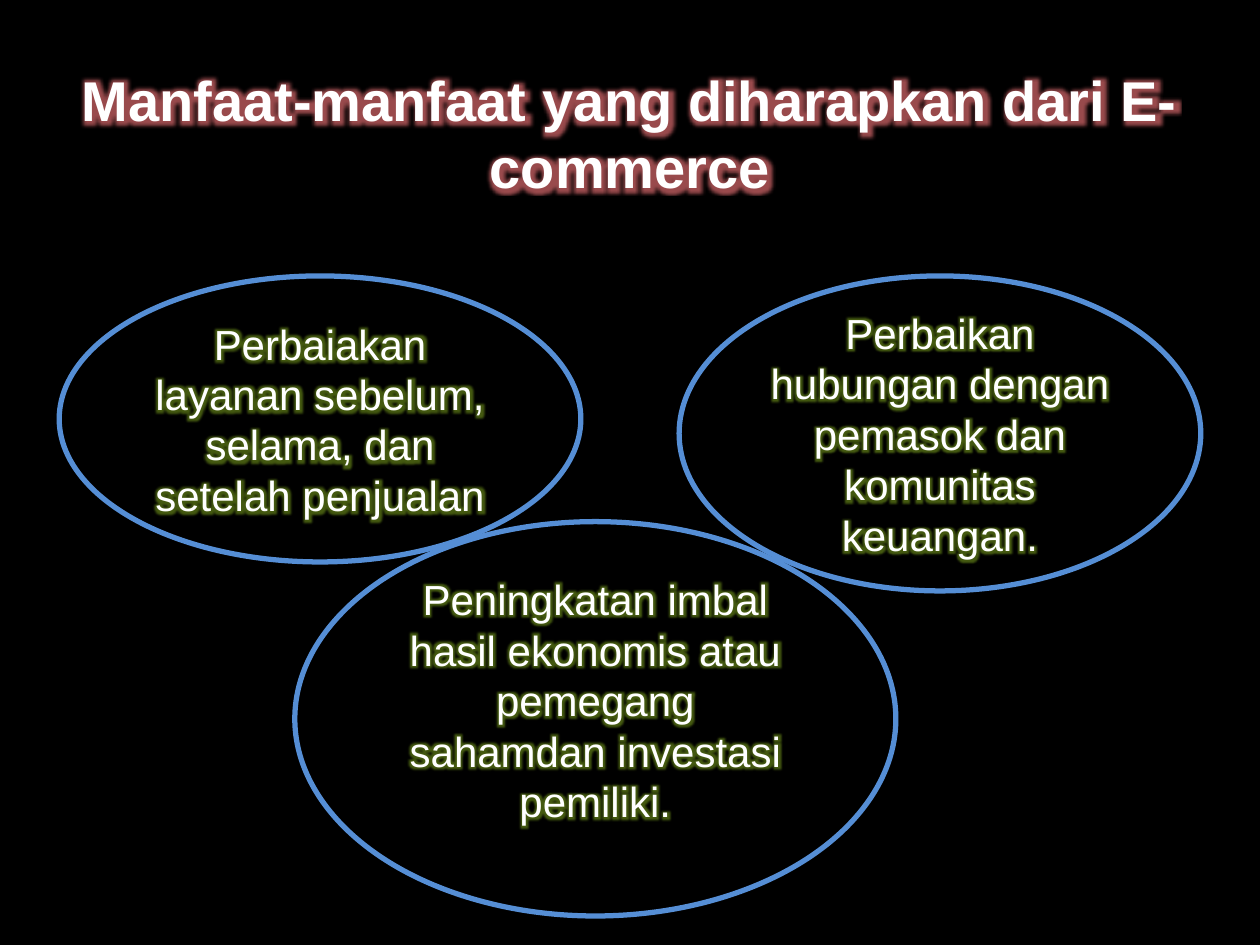
from dataclasses import dataclass

from lxml import etree
from pptx import Presentation
from pptx.dml.color import RGBColor as Rgb
from pptx.enum.shapes import MSO_SHAPE as Shape
from pptx.enum.text import MSO_ANCHOR as Anchor, PP_ALIGN as Align
from pptx.oxml.ns import qn
from pptx.util import Inches, Pt


@dataclass(frozen=True)
class Theme:
    font: str = "Arial"
    background: str = "000000"
    text: str = "FFFFFF"
    outline: str = "558ED5"
    title_glow: tuple = ("FF7C80", 60)  # colour, opacity in percent
    benefit_glow: tuple = ("AAE028", 40)
    glow_radius: int = Pt(8)
    title_size: int = Pt(32)
    benefit_size: int = Pt(24)
    outline_width: int = Pt(3)


THEME = Theme()
TITLE = "Manfaat-manfaat yang diharapkan dari E-commerce"

# Text, (left, top, width, height) and bottom text margin in inches
BENEFITS = [
    ("Perbaiakan layanan sebelum, selama, dan setelah penjualan",
     (0.47, 2.19, 4.14, 2.27), 0.05),
    ("Perbaikan hubungan dengan pemasok dan komunitas keuangan.",
     (5.39, 2.19, 4.14, 2.5), 0.05),
    ("Peningkatan imbal hasil ekonomis atau pemegang sahamdan investasi pemiliki.",
     (2.34, 4.14, 4.77, 3.13), 0.35),
]


def add_glow(span, glow):
    """Put a soft halo behind the letters of a run."""
    color, opacity = glow
    effects = etree.Element(qn("a:effectLst"))
    halo = etree.SubElement(effects, qn("a:glow"), rad=str(int(THEME.glow_radius)))
    tint = etree.SubElement(halo, qn("a:srgbClr"), val=color)
    etree.SubElement(tint, qn("a:alpha"), val=str(opacity * 1000))
    span.font._element.find(qn("a:solidFill")).addnext(effects)


def write_text(shape, text, size, glow, bold=False):
    frame = shape.text_frame
    frame.text = text
    frame.word_wrap = True
    frame.vertical_anchor = Anchor.MIDDLE
    para = frame.paragraphs[0]
    para.alignment = Align.CENTER
    span = para.runs[0]
    span.font.name = THEME.font
    span.font.size = size
    span.font.bold = bold
    span.font.color.rgb = Rgb.from_string(THEME.text)
    add_glow(span, glow)


def add_title(page):
    title = page.shapes.title
    title.left, title.top = Inches(0.5), Inches(0.3)
    title.width, title.height = Inches(9), Inches(1.5)
    write_text(title, TITLE, THEME.title_size, THEME.title_glow, bold=True)


def add_benefit(page, text, bounds, bottom_margin):
    oval = page.shapes.add_shape(Shape.OVAL, *map(Inches, bounds))
    oval.shadow.inherit = False
    oval.fill.solid()
    oval.fill.fore_color.rgb = Rgb.from_string(THEME.background)
    oval.line.color.rgb = Rgb.from_string(THEME.outline)
    oval.line.width = THEME.outline_width
    write_text(oval, text, THEME.benefit_size, THEME.benefit_glow)
    oval.text_frame.margin_bottom = Inches(bottom_margin)


def main():
    deck = Presentation()
    deck.slide_width, deck.slide_height = Inches(10), Inches(7.5)
    page = deck.slides.add_slide(deck.slide_layouts[5])

    # Background
    page.background.fill.solid()
    page.background.fill.fore_color.rgb = Rgb.from_string(THEME.background)

    # Title and the overlapping ovals
    add_title(page)
    for text, bounds, bottom_margin in BENEFITS:
        add_benefit(page, text, bounds, bottom_margin)

    deck.save("out.pptx")


if __name__ == "__main__":
    main()
